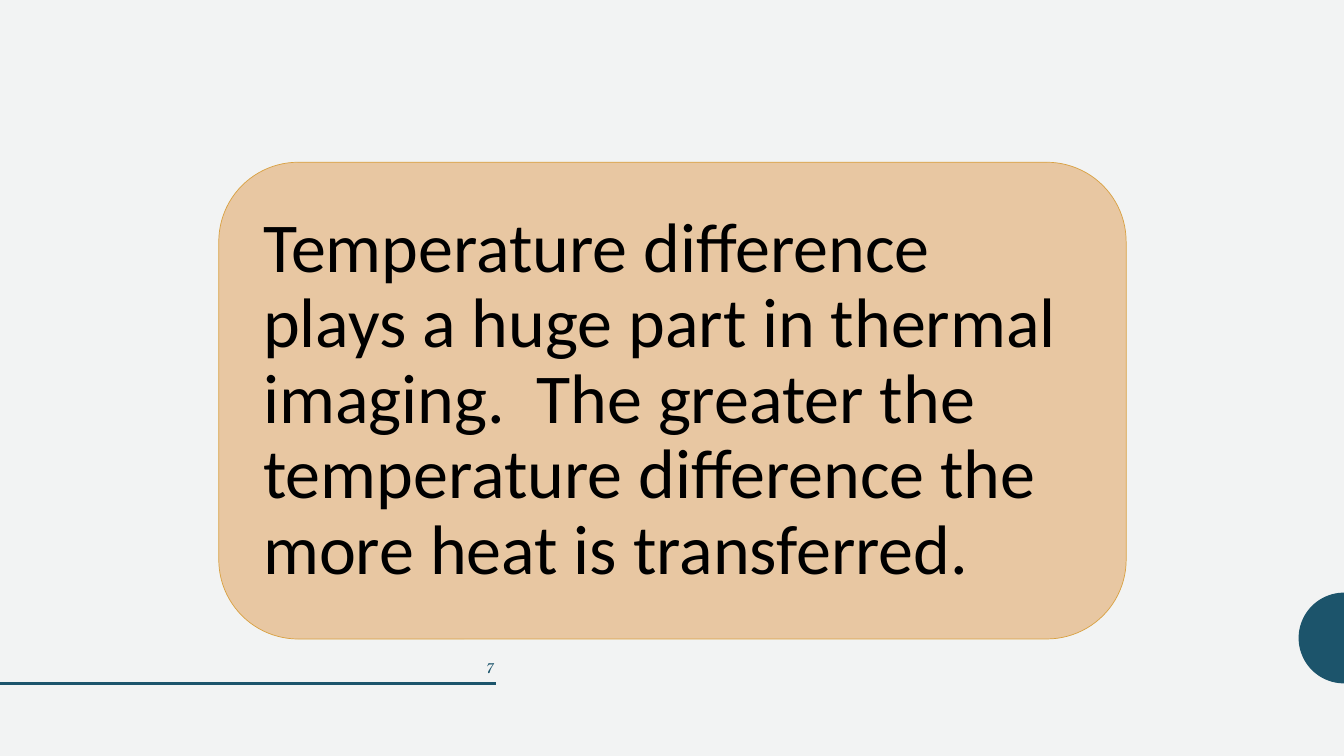
from math import cos, pi, sin

from pptx import Presentation
from pptx.dml.color import RGBColor
from pptx.enum.shapes import MSO_CONNECTOR, MSO_SHAPE
from pptx.enum.text import MSO_ANCHOR, PP_ALIGN
from pptx.oxml.ns import qn
from pptx.util import Inches, Pt


def color(value):
    return RGBColor.from_string(value)


class SlideBuilder:
    BACKGROUND = "F2F3F3"
    ACCENT = "1C546B"
    CARD = "E8C7A2"
    CARD_LINE = "D9A142"
    BODY_FONT = "Calibri"
    NUMBER_FONT = "TeX Gyre Schola"

    def __init__(self, page):
        self.page = page
        fill = page.background.fill
        fill.solid()
        fill.fore_color.rgb = color(self.BACKGROUND)

    def paint(self, shape, fill, line=None):
        shape.shadow.inherit = False
        shape.fill.solid()
        shape.fill.fore_color.rgb = color(fill)
        if line:
            shape.line.color.rgb = color(line)
            shape.line.width = Pt(0.5)
        else:
            shape.line.fill.background()

    def add_text(self, shape, text, size, font, ink, align, italic=False):
        shape.text_frame.word_wrap = True
        para = shape.text_frame.paragraphs[0]
        para.alignment = align
        span = para.add_run()
        span.text = text
        span.font.size = Pt(size)
        span.font.name = font
        span.font.italic = italic
        span.font.color.rgb = color(ink)
        return para

    def half_disc(self, center_x, center_y, radius, steps=48):
        angles = [pi / 2 + pi * step / steps for step in range(steps + 1)]
        points = [(Inches(center_x + radius * cos(angle)),
                   Inches(center_y + radius * sin(angle))) for angle in angles]
        outline = self.page.shapes.build_freeform(*points[0])
        outline.add_line_segments(points[1:], close=True)
        self.paint(outline.convert_to_shape(), self.ACCENT)

    def rule(self, left, right, top):
        line = self.page.shapes.add_connector(
            MSO_CONNECTOR.STRAIGHT, Inches(left), Inches(top), Inches(right), Inches(top))
        line.line.color.rgb = color(self.ACCENT)
        line.line.width = Pt(2)
        properties = line.element.find(qn("p:spPr"))
        properties.append(properties.makeelement(qn("a:effectLst"), {}))

    def card(self, left, top, width, height, text):
        box = self.page.shapes.add_shape(
            MSO_SHAPE.ROUNDED_RECTANGLE,
            Inches(left), Inches(top), Inches(width), Inches(height))
        self.paint(box, self.CARD, self.CARD_LINE)
        frame = box.text_frame
        frame.vertical_anchor = MSO_ANCHOR.MIDDLE
        frame.margin_left = frame.margin_right = Inches(0.21)
        frame.margin_top = frame.margin_bottom = Inches(0.21)
        para = self.add_text(box, text, 50, self.BODY_FONT, "000000", PP_ALIGN.LEFT)
        para.line_spacing = 0.9

    def page_number(self, left, top, width, height, number):
        box = self.page.shapes.add_textbox(
            Inches(left), Inches(top), Inches(width), Inches(height))
        self.add_text(box, number, 10, self.NUMBER_FONT, self.ACCENT,
                      PP_ALIGN.RIGHT, italic=True)


def main():
    deck = Presentation()
    deck.slide_width = Inches(13.33)
    deck.slide_height = Inches(7.5)
    blank_layout = deck.slide_layouts[6]
    builder = SlideBuilder(deck.slides.add_slide(blank_layout))

    # Edge decoration
    builder.half_disc(13.33, 6.33, 0.45)
    builder.rule(0, 4.92, 6.78)

    # Main statement
    builder.card(2.17, 1.61, 9, 4.73,
                 "Temperature difference plays a huge part in thermal imaging.  "
                 "The greater the temperature difference the more heat is transferred.")

    # Footer
    builder.page_number(0.83, 6.49, 4.17, 0.4, "7")

    deck.save("out.pptx")


if __name__ == "__main__":
    main()
